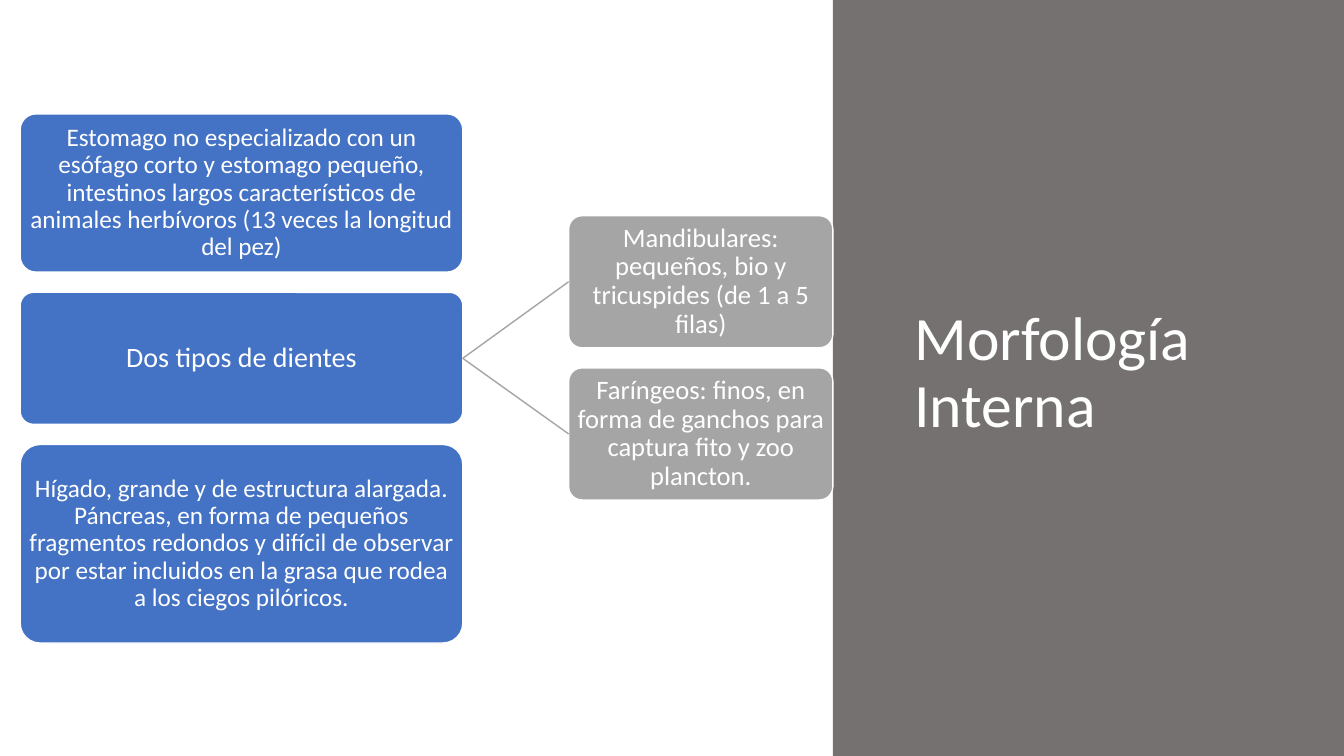
from pptx import Presentation
from pptx.dml.color import RGBColor
from pptx.enum.shapes import MSO_CONNECTOR, MSO_SHAPE
from pptx.enum.text import MSO_ANCHOR, MSO_AUTO_SIZE, PP_ALIGN
from pptx.oxml.ns import qn
from pptx.util import Inches, Pt

STRAIGHT = MSO_CONNECTOR.STRAIGHT
RECTANGLE = MSO_SHAPE.RECTANGLE
ROUNDED = MSO_SHAPE.ROUNDED_RECTANGLE
MIDDLE = MSO_ANCHOR.MIDDLE
NO_AUTOFIT = MSO_AUTO_SIZE.NONE
LEFT, CENTER = PP_ALIGN.LEFT, PP_ALIGN.CENTER

COLORS = {"panel": "767171", "topic": "4472C4", "detail": "A5A5A5", "white": "FFFFFF"}
FONT = "Calibri"
TITLE_ONLY = 5
LEFT_SIDE, RIGHT_SIDE = 1, 3
GAP = 0.2

# Text, size in points, height in inches
TOPICS = [
    ("Estomago no especializado con un esófago corto y estomago pequeño, "
     "intestinos largos característicos de animales herbívoros "
     "(13 veces la longitud del pez)", 18, 1.57),
    ("Dos tipos de dientes", 20, 1.31),
    ("Hígado, grande y de estructura alargada. Páncreas, en forma de pequeños "
     "fragmentos redondos y difícil de observar por estar incluidos en la grasa "
     "que rodea a los ciegos pilóricos.", 18, 1.97),
]
TEETH = [
    ("Mandibulares: pequeños, bio y tricuspides (de 1 a 5 filas)", 19, 1.31),
    ("Faríngeos: finos, en forma de ganchos para captura fito y zoo plancton.", 19, 1.31),
]


def color(name):
    return RGBColor.from_string(COLORS[name])


def write(shape, text, size, align):
    frame = shape.text_frame
    frame.text = text
    frame.word_wrap = True
    frame.auto_size = NO_AUTOFIT
    frame.vertical_anchor = MIDDLE
    para = frame.paragraphs[0]
    para.alignment = align
    para.line_spacing = 0.9
    font = para.runs[0].font
    font.name = FONT
    font.size = Pt(size)
    font.color.rgb = color("white")


def add_block(page, kind, fill, left, top, width, height):
    block = page.shapes.add_shape(
        kind, Inches(left), Inches(top), Inches(width), Inches(height))
    block.shadow.inherit = False
    block.fill.solid()
    block.fill.fore_color.rgb = color(fill)
    return block


def add_title_panel(page, left, top, width, height):
    panel = add_block(page, RECTANGLE, "panel", left, top, width, height)
    panel.line.fill.background()
    title = page.shapes.title
    title.left, title.top = Inches(left + 0.71), Inches(top + 0.7)
    title.width, title.height = Inches(4.01), Inches(6.02)
    write(title, "Morfología Interna", 44, LEFT)
    title.element.addprevious(panel.element)


def add_column(page, items, fill, left, top, width):
    """Stack rounded boxes downwards from top and return them."""
    boxes = []
    for text, size, height in items:
        box = add_block(page, ROUNDED, fill, left, top, width, height)
        box.adjustments[0] = 0.1
        box.line.color.rgb = color("white")
        box.line.width = Pt(1)
        frame = box.text_frame
        frame.margin_left = frame.margin_right = Inches(0.01)
        frame.margin_top = frame.margin_bottom = Inches(0.01)
        write(box, text, size, CENTER)
        boxes.append(box)
        top += height + GAP
    return boxes


def join(page, parent, child):
    branch = page.shapes.add_connector(STRAIGHT, 0, 0, 0, 0)
    branch.begin_connect(parent, RIGHT_SIDE)
    branch.end_connect(child, LEFT_SIDE)
    branch.line.color.rgb = color("detail")
    branch.line.width = Pt(1)
    properties = branch.element.spPr
    properties.append(properties.makeelement(qn("a:effectLst"), {}))


def add_hierarchy(page, left, top):
    topics = add_column(page, TOPICS, "topic", left, top, 4.39)
    teeth = add_column(page, TEETH, "detail", left + 5.44, top + 1.01, 2.62)
    for tooth in teeth:
        join(page, topics[1], tooth)


def main():
    deck = Presentation()
    deck.slide_width, deck.slide_height = Inches(13.33), Inches(7.5)
    page = deck.slides.add_slide(deck.slide_layouts[TITLE_ONLY])
    add_title_panel(page, 8.26, 0, 5.07, 7.5)
    add_hierarchy(page, 0.2, 1.13)
    deck.save("out.pptx")


if __name__ == "__main__":
    main()
